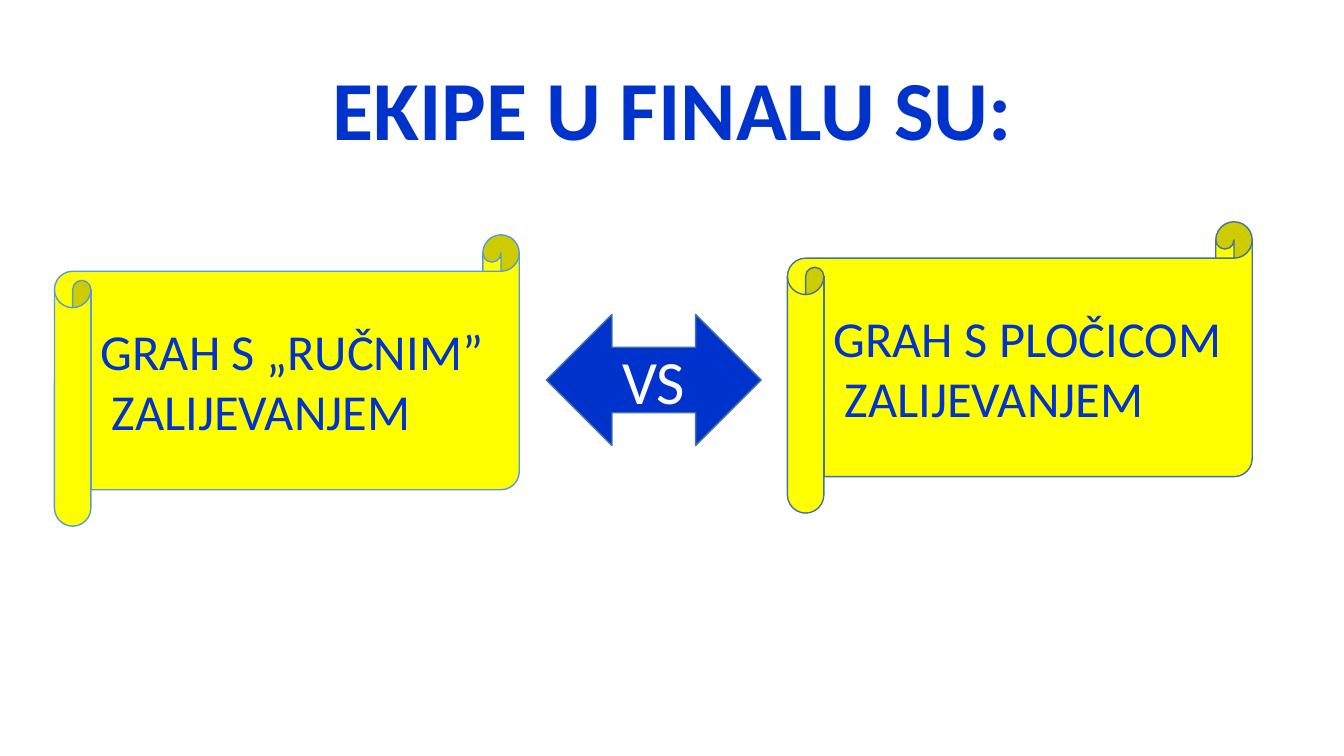
from pptx import Presentation
from pptx.dml.color import RGBColor
from pptx.enum.shapes import MSO_SHAPE
from pptx.enum.text import MSO_ANCHOR, PP_ALIGN
from pptx.util import Inches, Pt

BLUE = RGBColor(0x00, 0x33, 0xCC)
YELLOW = RGBColor(0xFF, 0xFF, 0x00)
WHITE = RGBColor(0xFF, 0xFF, 0xFF)
DARK_OUTLINE = RGBColor(0x43, 0x73, 0x9E)
LIGHT_OUTLINE = RGBColor(0x5B, 0x9B, 0xD5)

SCROLL = MSO_SHAPE.HORIZONTAL_SCROLL
DOUBLE_ARROW = MSO_SHAPE.LEFT_RIGHT_ARROW
MIDDLE = MSO_ANCHOR.MIDDLE
LEFT, CENTER = PP_ALIGN.LEFT, PP_ALIGN.CENTER

TITLE_ONLY = 5
SCROLL_SIZE = (4.61, 2.89)
SECOND_LINE_INDENT = Inches(0.11)


class SlideBuilder:
    font_name = "Calibri"

    def __init__(self, presentation):
        self.slide = presentation.slides.add_slide(presentation.slide_layouts[TITLE_ONLY])

    def set_text(self, shape, text, size, color, align, bold=False):
        frame = shape.text_frame
        frame.word_wrap = True
        frame.vertical_anchor = MIDDLE
        paragraph = frame.paragraphs[0]
        paragraph.text = text
        paragraph.alignment = align
        font_format = {"name": self.font_name, "size": Pt(size), "bold": bold}
        for run in paragraph.runs:
            for name, value in font_format.items():
                setattr(run.font, name, value)
            run.font.color.rgb = color
        return paragraph

    def title(self, text, left, top, width, height):
        shape = self.slide.shapes.title
        position = {"left": left, "top": top, "width": width, "height": height}
        for name, value in position.items():
            setattr(shape, name, Inches(value))
        paragraph = self.set_text(shape, text, 60, BLUE, CENTER, bold=True)
        paragraph.line_spacing = 0.9

    def shape(self, kind, left, top, width, height, fill, outline):
        shape = self.slide.shapes.add_shape(
            kind, Inches(left), Inches(top), Inches(width), Inches(height))
        shape.shadow.inherit = False
        shape.fill.solid()
        shape.fill.fore_color.rgb = fill
        shape.line.color.rgb = outline
        shape.line.width = Pt(1)
        return shape

    def versus_arrow(self, text, left, top, width, height):
        shape = self.shape(DOUBLE_ARROW, left, top, width, height, BLUE, DARK_OUTLINE)
        self.set_text(shape, text, 44, WHITE, CENTER)

    def team_scroll(self, lines, left, top, outline):
        """Draw a team's scroll with its second line slightly indented."""
        shape = self.shape(SCROLL, left, top, *SCROLL_SIZE, YELLOW, outline)
        shape.text_frame.margin_right = Inches(0.05)
        paragraph = self.set_text(shape, "\v".join(lines), 36, BLUE, LEFT)
        properties = paragraph._p.get_or_add_pPr()
        properties.set("marL", str(SECOND_LINE_INDENT))
        properties.set("indent", str(-SECOND_LINE_INDENT))


def main():
    presentation = Presentation()
    presentation.slide_width = Inches(13.33)
    presentation.slide_height = Inches(7.5)
    builder = SlideBuilder(presentation)
    builder.title("EKIPE U FINALU SU:", 0.92, 0.4, 11.5, 1.45)
    builder.versus_arrow("VS", 5.42, 3.12, 2.13, 1.3)
    builder.team_scroll(["GRAH S PLOČICOM", "ZALIJEVANJEM"], 7.81, 2.2, DARK_OUTLINE)
    builder.team_scroll(["GRAH S „RUČNIM”", "ZALIJEVANJEM"], 0.54, 2.33, LIGHT_OUTLINE)
    presentation.save("out.pptx")


if __name__ == "__main__":
    main()
